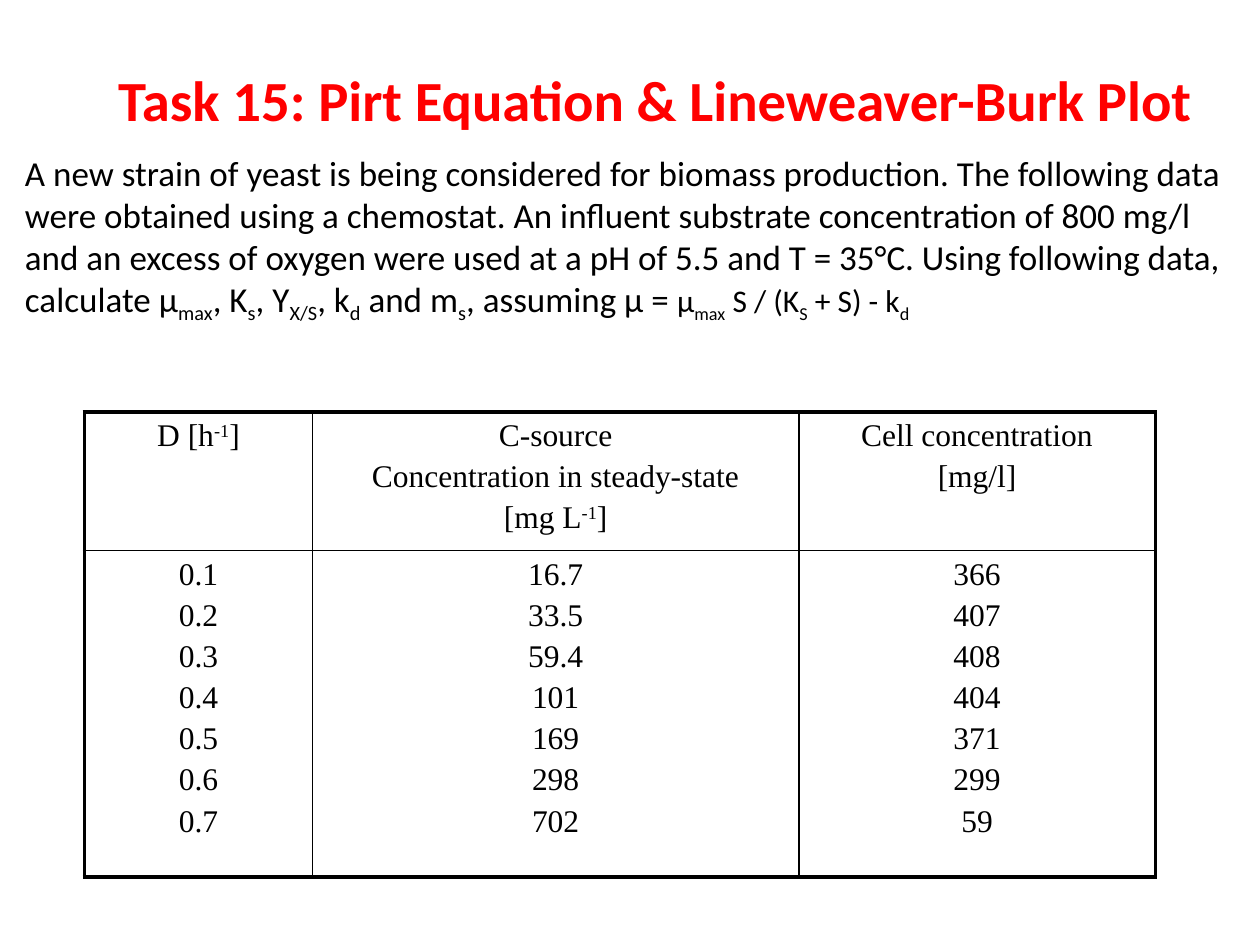
from dataclasses import dataclass
from lxml.etree import SubElement as Sub
from pptx import Presentation
from pptx.dml.color import RGBColor as RGB
from pptx.enum.text import MSO_ANCHOR as Anchor, MSO_AUTO_SIZE as Fit, PP_ALIGN as Align
from pptx.oxml.ns import qn
from pptx.util import Inches, Pt


@dataclass
class Theme:
    ink: str = "000000"
    accent: str = "FF0000"
    sans: str = "Calibri"
    serif: str = "Times New Roman"
    title: float = 32.4
    body: float = 20
    small: float = 18
    thick: float = 2.25
    thin: float = 1


class Deck:
    def __init__(self, theme, width=10, height=7.5):
        self.theme = theme
        self.prs = Presentation()
        self.wide, self.high = Inches(width), Inches(height)
        self.prs.slide_width, self.prs.slide_height = self.wide, self.high
        self.slide = self.prs.slides.add_slide(self.prs.slide_layouts[5])

    def area(self, left, top, width, height):
        """Turn shares of the slide into lengths."""
        return (int(left * self.wide), int(top * self.high),
                int(width * self.wide), int(height * self.high))

    def runs(self, para, text, shift=0, color=None, **form):
        """Add runs; every second part between bars is shifted off the line."""
        for i, part in enumerate(text.split("|")):
            if not part:
                continue
            run = para.add_run()
            run.text = part
            run.font.color.rgb = RGB.from_string(color or self.theme.ink)
            for key, value in form.items():
                setattr(run.font, key, value)
            if i % 2:
                run._r.get_or_add_rPr().set("baseline", str(shift * 1000))

    def title(self, text, box):
        t, shape = self.theme, self.slide.shapes.title
        for key, value in zip(("left", "top", "width", "height"), self.area(*box)):
            setattr(shape, key, value)
        frame = shape.text_frame
        form = dict(auto_size=Fit.NONE, word_wrap=True, vertical_anchor=Anchor.MIDDLE)
        for key, value in form.items():
            setattr(frame, key, value)
        para = frame.paragraphs[0]
        para.alignment = Align.CENTER
        self.runs(para, text, color=t.accent, name=t.sans, size=Pt(t.title), bold=True)

    def text(self, parts, box):
        frame = self.slide.shapes.add_textbox(*self.area(*box)).text_frame
        frame.word_wrap = True
        frame.auto_size = Fit.SHAPE_TO_FIT_TEXT
        for text, size in parts:
            self.runs(frame.paragraphs[0], text, -25, name=self.theme.sans, size=Pt(size))

    def edge(self, cell, side, width):
        line = Sub(cell._tc.get_or_add_tcPr(), qn("a:ln" + side), w=str(Pt(width)))
        Sub(Sub(line, qn("a:solidFill")), qn("a:srgbClr"), val=self.theme.ink)

    def table(self, rows, widths, heights, left, top):
        t, last, end = self.theme, len(rows) - 1, len(widths) - 1
        box = self.area(left, top, sum(widths), sum(heights))
        grid = self.slide.shapes.add_table(len(rows), len(widths), *box).table
        grid.first_row = grid.horz_banding = False
        for col, share in zip(grid.columns, widths):
            col.width = int(share * self.wide)
        for row, share in zip(grid.rows, heights):
            row.height = int(share * self.high)
        for r, row in enumerate(rows):
            for c, lines in enumerate(row):
                cell = grid.cell(r, c)
                # Thick outside, thin inside
                outer = {"L": c == 0, "R": c == end, "T": r == 0, "B": r == last}
                for side, bold in outer.items():
                    self.edge(cell, side, t.thick if bold else t.thin)
                cell.fill.background()
                self.lines(cell.text_frame, lines)

    def lines(self, frame, lines):
        for i, line in enumerate(lines):
            para = frame.add_paragraph() if i else frame.paragraphs[0]
            para.alignment = Align.CENTER
            gap = Sub(para._p.get_or_add_pPr(), qn("a:spcBef"))
            Sub(gap, qn("a:spcPct"), val="20000")
            self.runs(para, line, 30, name=self.theme.serif, size=Pt(self.theme.small))


def main():
    theme = Theme()
    deck = Deck(theme)

    # Heading
    deck.title("Task 15: Pirt Equation & Lineweaver-Burk Plot", (0.08, 0.02, 0.88, 0.17))

    # Problem statement
    task = ("A new strain of yeast is being considered for biomass production. "
            "The following data were obtained using a chemostat. An influent substrate "
            "concentration of 800 mg/l and an excess of oxygen were used at a pH of 5.5 "
            "and T = 35°C. Using following data, calculate "
            "µ|max|, K|s|, Y|X/S|, k|d| and m|s|, assuming µ = ")
    model = "µ|max| S / (K|S| + S) - k|d|"
    deck.text([(task, theme.body), (model, theme.small)], (0.01, 1.15 / 7.5, 0.99, 0.2))

    # Chemostat data
    heads = [["D [h|-1|]"],
             ["C-source", "Concentration in steady-state", "[mg L|-1|]"],
             ["Cell concentration", "[mg/l]"]]
    data = [["0.1", "0.2", "0.3", "0.4", "0.5", "0.6", "0.7"],
            ["16.7", "33.5", "59.4", "101", "169", "298", "702"],
            ["366", "407", "408", "404", "371", "299", "59"]]
    widths = [inch / 10 for inch in (1.81, 3.86, 2.83)]
    heights = [inch / 7.5 for inch in (1.05, 2.59)]
    deck.table([heads, data], widths, heights, 0.67 / 10, 3.27 / 7.5)

    deck.prs.save("out.pptx")


if __name__ == "__main__":
    main()
